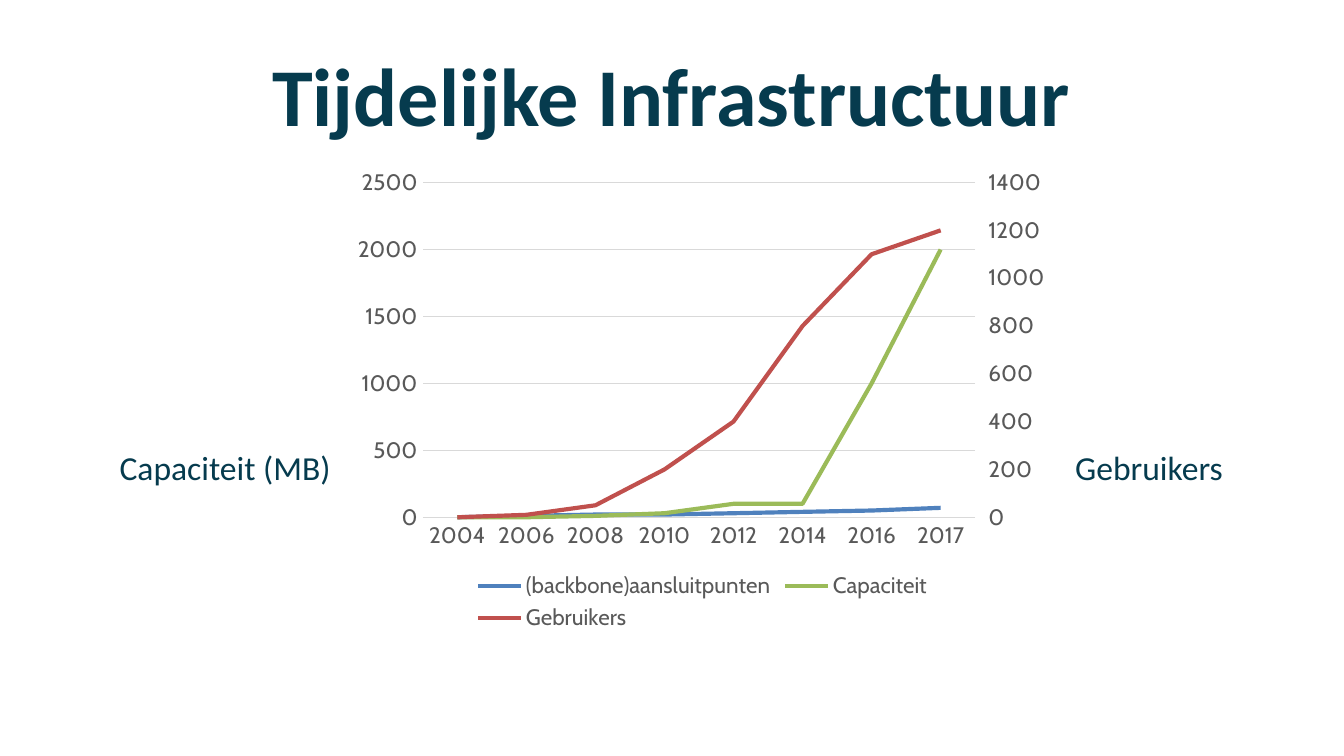
from copy import deepcopy

from lxml import etree
from pptx import Presentation
from pptx.chart.data import CategoryChartData
from pptx.dml.color import RGBColor
from pptx.enum.chart import XL_CHART_TYPE, XL_LEGEND_POSITION, XL_TICK_MARK
from pptx.enum.text import MSO_ANCHOR, PP_ALIGN
from pptx.oxml.ns import qn
from pptx.util import Cm, Pt

LINE = XL_CHART_TYPE.LINE
BOTTOM = XL_LEGEND_POSITION.BOTTOM
NO_TICK = XL_TICK_MARK.NONE
MIDDLE = MSO_ANCHOR.MIDDLE
LEFT, CENTER = PP_ALIGN.LEFT, PP_ALIGN.CENTER

NAVY, GREY, PALE = "063B4E", "595959", "D9D9D9"

# text, (left, top, width, height) in cm, size, bold, alignment, wrap
TEXTS = [
    ("Tijdelijke Infrastructuur", (1.27, 0.58, 22.86, 2.39), 44, True, CENTER, True),
    ("Gebruikers", (20.07, 8.31, 3.4, 1.02), 18, False, LEFT, False),
    ("Capaciteit (MB)", (2.01, 8.31, 4.55, 1.02), 18, False, LEFT, False),
]

CHART_PLACE = (6.5, 3, 13.56, 9.04)
PLOT_LAYOUT = {"x": 0.11, "y": 0.05, "w": 0.77, "h": 0.7}
YEARS = ["2004", "2006", "2008", "2010", "2012", "2014", "2016", "2017"]
SERIES = [
    ("(backbone)aansluitpunten", "4F81BD", [0, 10, 20, 20, 30, 40, 50, 70]),
    ("Capaciteit", "9BBB59", [0, 0, 10, 30, 100, 100, 1000, 2000]),
    ("Gebruikers", "C0504D", [0, 10, 50, 200, 400, 800, 1100, 1200]),
]
LEFT_SCALE = (2500, 500)
RIGHT_SCALE = (1400, 200)


def color(hex_value):
    return RGBColor.from_string(hex_value)


def style_font(font, name, size, hex_value, bold=False):
    font.name, font.size, font.bold = name, Pt(size), bold
    font.color.rgb = color(hex_value)


def style_line(line, hex_value, width):
    line.color.rgb = color(hex_value)
    line.width = Pt(width)


def add_text(page, text, place, size, bold, alignment, wrap):
    box = page.shapes.add_textbox(*map(Cm, place))
    frame = box.text_frame
    frame.word_wrap = wrap
    frame.vertical_anchor = MIDDLE
    para = frame.paragraphs[0]
    para.alignment = alignment
    span = para.add_run()
    span.text = text
    style_font(span.font, "Calibri", size, NAVY, bold)


def add_chart(page):
    data = CategoryChartData()
    data.categories = YEARS
    for name, _, values in SERIES:
        data.add_series(name, values)
    chart = page.shapes.add_chart(LINE, *map(Cm, CHART_PLACE), data).chart
    chart.has_title = False
    style_font(chart.font, "Cabin", 10, "000000")

    chart.has_legend = True
    chart.legend.position = BOTTOM
    chart.legend.include_in_layout = False
    style_font(chart.legend.font, "Cabin", 12, GREY)

    years, amounts = chart.category_axis, chart.value_axis
    for axis in (years, amounts):
        axis.major_tick_mark = axis.minor_tick_mark = NO_TICK
        style_font(axis.tick_labels.font, "Cabin", 12, GREY)
    style_line(years.format.line, PALE, 0.75)
    amounts.format.line.fill.background()
    amounts.minimum_scale = 0
    amounts.maximum_scale, amounts.major_unit = LEFT_SCALE
    amounts.has_major_gridlines = True
    style_line(amounts.major_gridlines.format.line, PALE, 0.75)

    plot = chart.plots[0]
    plot.vary_by_categories = False
    for series, (_, hex_value, _) in zip(plot.series, SERIES):
        series.smooth = False
        style_line(series.format.line, hex_value, 2.25)
    return chart


def set_value(parent, tag, value):
    parent.find(".//" + qn(tag)).set("val", str(value))


def move_last_series_to_right_axis(chart):
    area = chart._chartSpace.chart.plotArea
    lines, years, amounts = (area.find(qn(tag)) for tag in ("c:lineChart", "c:catAx", "c:valAx"))
    right_lines, right_years, right_amounts = map(deepcopy, (lines, years, amounts))

    all_series = lines.findall(qn("c:ser"))
    lines.remove(all_series[-1])
    for series in right_lines.findall(qn("c:ser"))[:-1]:
        right_lines.remove(series)

    year_id, amount_id = 50010, 50020
    for element, new_id in zip(right_lines.findall(qn("c:axId")), (year_id, amount_id)):
        element.set("val", str(new_id))
    for axis, own_id, cross_id in ((right_years, year_id, amount_id),
                                   (right_amounts, amount_id, year_id)):
        set_value(axis, "c:axId", own_id)
        set_value(axis, "c:crossAx", cross_id)
    set_value(right_years, "c:delete", 1)

    right_amounts.remove(right_amounts.find(qn("c:majorGridlines")))
    maximum, step = RIGHT_SCALE
    for tag, value in (("c:axPos", "r"), ("c:crosses", "max"), ("c:majorTickMark", "out"),
                       ("c:max", maximum), ("c:majorUnit", step)):
        set_value(right_amounts, tag, value)

    lines.addnext(right_lines)
    amounts.addnext(right_amounts)
    right_amounts.addnext(right_years)


def set_plot_layout(chart):
    area = chart._chartSpace.chart.plotArea
    for old in area.findall(qn("c:layout")):
        area.remove(old)
    layout = etree.Element(qn("c:layout"))
    manual = etree.SubElement(layout, qn("c:manualLayout"))
    settings = {"layoutTarget": "inner", "xMode": "edge", "yMode": "edge", **PLOT_LAYOUT}
    for name, value in settings.items():
        etree.SubElement(manual, qn("c:" + name)).set("val", str(value))
    area.insert(0, layout)


def main():
    deck = Presentation()
    deck.slide_width, deck.slide_height = Cm(25.4), Cm(14.29)
    page = deck.slides.add_slide(deck.slide_layouts[6])
    title, *labels = TEXTS
    add_text(page, *title)
    chart = add_chart(page)
    move_last_series_to_right_axis(chart)
    set_plot_layout(chart)
    for label in labels:
        add_text(page, *label)
    deck.save("out.pptx")


if __name__ == "__main__":
    main()
